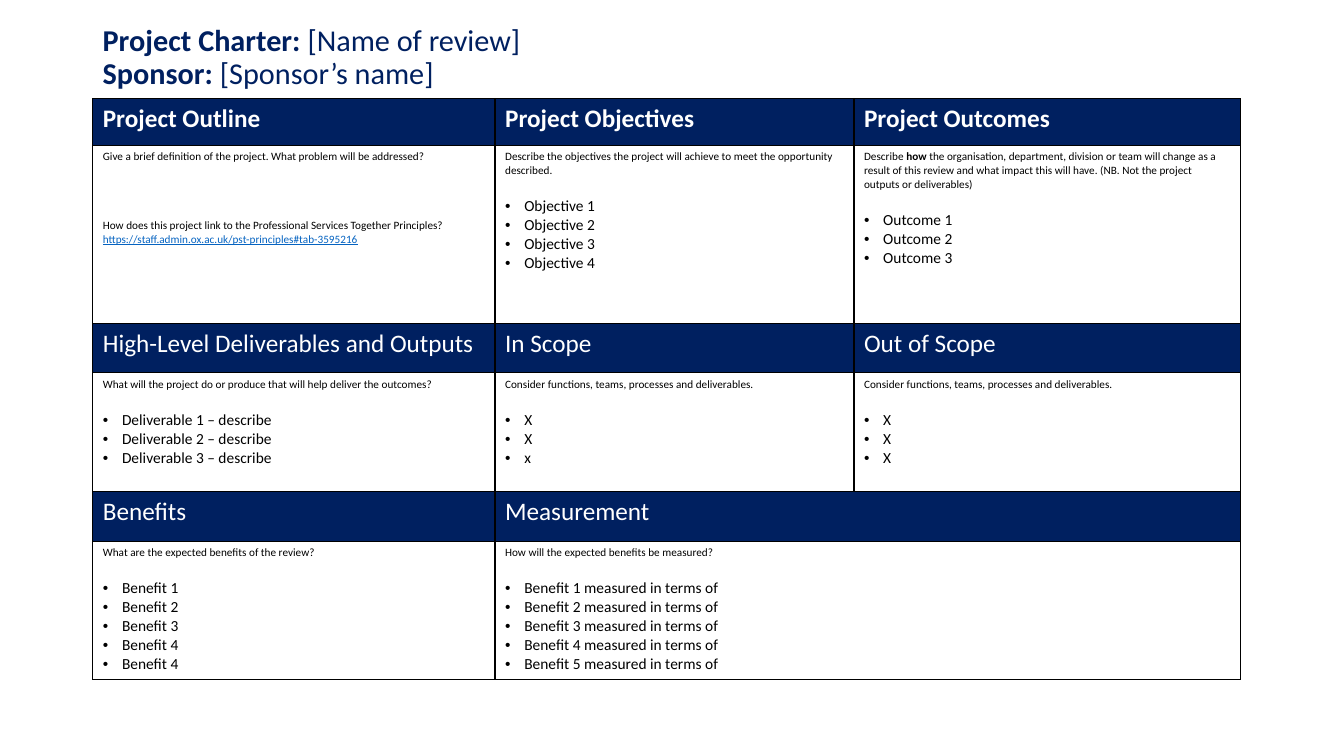
from lxml import etree
from pptx import Presentation
from pptx.dml.color import RGBColor
from pptx.enum.text import MSO_ANCHOR
from pptx.oxml.ns import qn
from pptx.util import Inches, Pt

MIDDLE = MSO_ANCHOR.MIDDLE
FONT = "Calibri"
NAVY, WHITE, BLACK, LINK_BLUE = "002060", "FFFFFF", "000000", "0563C1"
HEADING_SIZE, PROMPT_SIZE, ITEM_SIZE = 18, 8, 11
PROMPT_GAP = 13.4  # one item line, in points
ANSWER_GAP = 39  # four prompt lines, in points

COLUMN_WIDTHS = [3.99, 3.56, 3.83]

# Each band: heading height, body height, bold headings, sections.
# Each section: heading, prompt paragraphs, bulleted items.
# Each prompt paragraph is a list of (text, format) runs.
SCOPE_PROMPT = [[("Consider functions, teams, processes and deliverables.", {})]]
BANDS = [
    (0.46, 1.77, True, [
        ("Project Outline", [
            [("Give a brief definition of the project. What problem will be addressed?", {})],
            [("How does this project link to the Professional Services Together Principles?", {})],
            [("https://staff.admin.ox.ac.uk/pst-principles#tab-3595216",
              {"color": LINK_BLUE, "underline": True})],
        ], []),
        ("Project Objectives", [
            [("Describe the objectives the project will achieve to meet the opportunity described.", {})],
        ], [f"Objective {n}" for n in range(1, 5)]),
        ("Project Outcomes", [
            [("Describe ", {}), ("how", {"bold": True}),
             (" the organisation, department, division or team will change as a result of this "
              "review and what impact this will have. (NB. Not the project outputs or "
              "deliverables)", {})],
        ], [f"Outcome {n}" for n in range(1, 4)]),
    ]),
    (0.49, 1.18, False, [
        ("High-Level Deliverables and Outputs", [
            [("What will the project do or produce that will help deliver the outcomes?", {})],
        ], [f"Deliverable {n} – describe" for n in range(1, 4)]),
        ("In Scope", SCOPE_PROMPT, ["X", "X", "x"]),
        ("Out of Scope", SCOPE_PROMPT, ["X", "X", "X"]),
    ]),
    (0.49, 1.37, False, [
        ("Benefits", [[("What are the expected benefits of the review?", {})]],
         [f"Benefit {n}" for n in (1, 2, 3, 4, 4)]),
        ("Measurement", [[("How will the expected benefits be measured?", {})]],
         [f"Benefit {n} measured in terms of" for n in range(1, 6)]),
    ]),
]


def rgb(hex_color):
    return RGBColor.from_string(hex_color)


def add_text(paragraph, text, size, color=BLACK, bold=False, underline=False):
    run = paragraph.add_run()
    run.text = text
    font = run.font
    font.name, font.size, font.bold = FONT, Pt(size), bold
    font.underline = underline
    font.color.rgb = rgb(color)


def next_paragraph(frame):
    """Return the frame's empty first paragraph, or a new one after its text."""
    first = frame.paragraphs[0]
    return frame.add_paragraph() if first.runs else first


def add_bullet(paragraph, indent=0.19):
    properties = paragraph._p.get_or_add_pPr()
    properties.set("marL", str(Inches(indent)))
    properties.set("indent", str(Inches(-indent)))
    etree.SubElement(properties, qn("a:buFont")).set("typeface", "Arial")
    etree.SubElement(properties, qn("a:buChar")).set("char", "•")


def style_cell(cell, fill=None):
    """Give the cell thin black borders and a fill, or none."""
    properties = cell._tc.get_or_add_tcPr()
    for side in ("lnL", "lnR", "lnT", "lnB"):
        border = etree.SubElement(properties, qn(f"a:{side}"), w=str(Pt(1)))
        solid = etree.SubElement(border, qn("a:solidFill"))
        etree.SubElement(solid, qn("a:srgbClr"), val=BLACK)
    if fill:
        cell.fill.solid()
        cell.fill.fore_color.rgb = rgb(fill)
    else:
        cell.fill.background()


def fill_body(frame, prompts, items):
    for number, runs in enumerate(prompts):
        paragraph = next_paragraph(frame)
        if number == 1:
            paragraph.space_before = Pt(ANSWER_GAP)
        for text, style in runs:
            add_text(paragraph, text, PROMPT_SIZE, **style)
    for number, item in enumerate(items):
        paragraph = next_paragraph(frame)
        if number == 0:
            paragraph.space_before = Pt(PROMPT_GAP)
        add_bullet(paragraph)
        add_text(paragraph, item, ITEM_SIZE)


def add_title(slide, left, top, width, height):
    frame = slide.shapes.add_textbox(
        Inches(left), Inches(top), Inches(width), Inches(height)).text_frame
    frame.word_wrap = True
    frame.vertical_anchor = MIDDLE
    for label, value in (("Project Charter: ", "[Name of review]"),
                         ("Sponsor: ", "[Sponsor’s name]")):
        paragraph = next_paragraph(frame)
        paragraph.line_spacing = 0.9
        add_text(paragraph, label, 21.6, NAVY, bold=True)
        add_text(paragraph, value, 21.6, NAVY)


def add_charter(slide, left, top):
    heights = [height for band in BANDS for height in band[:2]]
    table = slide.shapes.add_table(
        len(heights), len(COLUMN_WIDTHS), Inches(left), Inches(top),
        Inches(sum(COLUMN_WIDTHS)), Inches(sum(heights))).table
    table.first_row = table.horz_banding = False
    for column, width in zip(table.columns, COLUMN_WIDTHS):
        column.width = Inches(width)
    for index, (row, height) in enumerate(zip(table.rows, heights)):
        row.height = Inches(height)
        for cell in row.cells:
            style_cell(cell, None if index % 2 else NAVY)

    last = len(COLUMN_WIDTHS) - 1
    for band_number, (_, _, bold, sections) in enumerate(BANDS):
        heading_row = 2 * band_number
        body_row = heading_row + 1
        if len(sections) <= last:
            for row in (heading_row, body_row):
                table.cell(row, len(sections) - 1).merge(table.cell(row, last))
        for column, (heading, prompts, items) in enumerate(sections):
            heading_frame = table.cell(heading_row, column).text_frame
            add_text(heading_frame.paragraphs[0], heading, HEADING_SIZE, WHITE, bold)
            fill_body(table.cell(body_row, column).text_frame, prompts, items)


def main():
    deck = Presentation()
    deck.slide_width, deck.slide_height = Inches(13.33), Inches(7.5)
    slide = deck.slides.add_slide(deck.slide_layouts[6])
    add_title(slide, 0.92, 0.17, 11.5, 0.82)
    add_charter(slide, 0.92, 0.98)
    deck.save("out.pptx")


if __name__ == "__main__":
    main()
